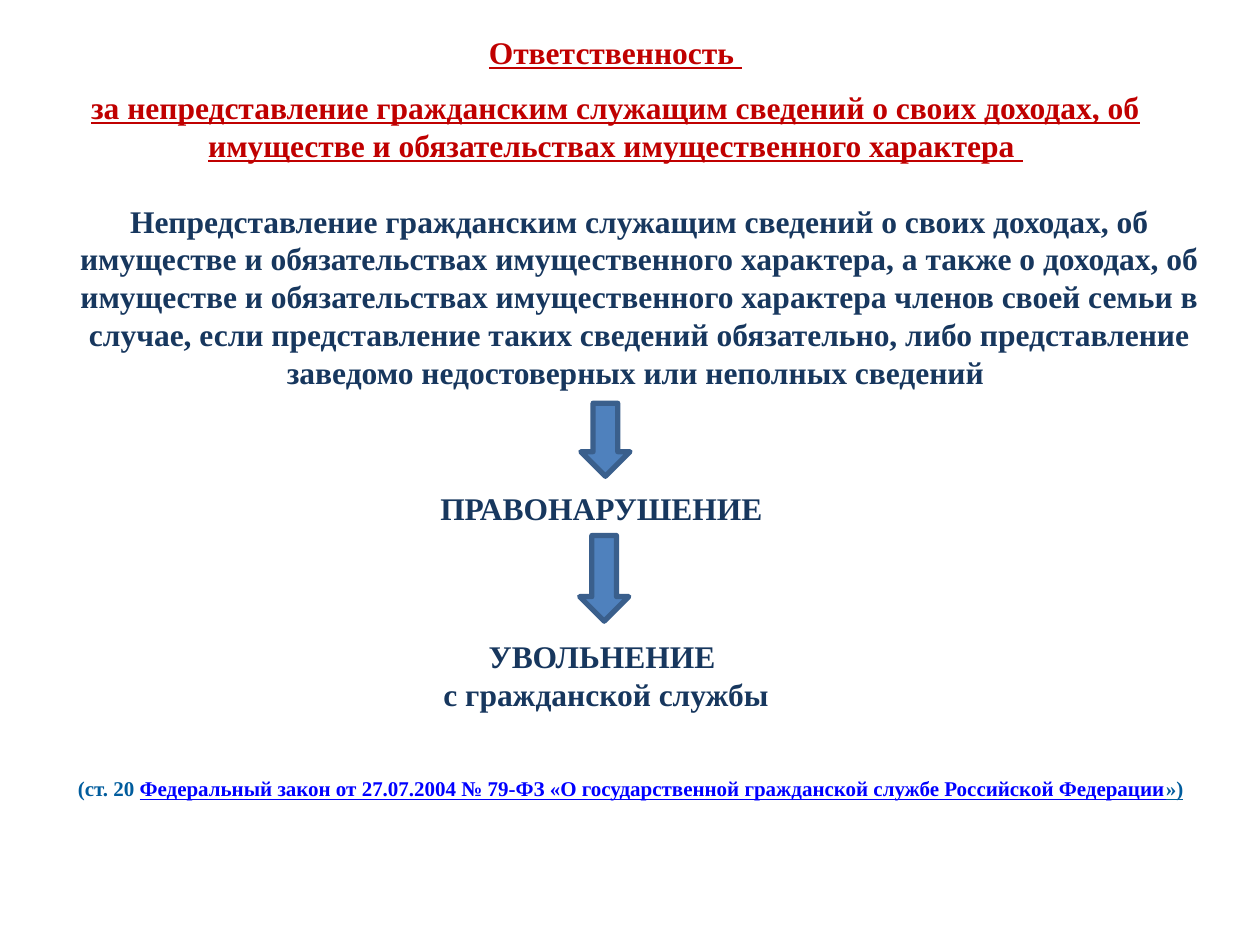
"""Build a slide on liability for not filing income declarations."""
from dataclasses import dataclass

from pptx import Presentation
from pptx.dml.color import RGBColor
from pptx.enum.shapes import MSO_SHAPE
from pptx.enum.text import MSO_ANCHOR, MSO_AUTO_SIZE, PP_ALIGN
from pptx.util import Inches, Pt

FONT = "Times New Roman"
RED = RGBColor(0xC0, 0x00, 0x00)
NAVY = RGBColor(0x17, 0x37, 0x5E)
TEAL = RGBColor(0x00, 0x5C, 0x9D)
LINK_BLUE = RGBColor(0x00, 0x00, 0xFF)
ARROW_FILL = RGBColor(0x4F, 0x81, 0xBD)
ARROW_LINE = RGBColor(0x3A, 0x5F, 0x8C)


@dataclass
class Area:
    left: float
    top: float
    width: float
    height: float

    def lengths(self) -> tuple:
        return tuple(map(Inches, (self.left, self.top, self.width, self.height)))


@dataclass
class Span:
    text: str
    color: RGBColor = NAVY
    size: int = 18
    underline: bool = False


@dataclass
class Block:
    area: Area
    paragraphs: list[list[Span]]


TITLE_AREA = Area(0.28, 0.21, 9.21, 1.15)
TITLE = [
    [Span("Ответственность ", RED, underline=True)],
    [Span("за непредставление гражданским служащим сведений о своих доходах, "
          "об имуществе и обязательствах имущественного характера ",
          RED, underline=True)],
]
BLOCKS = [
    Block(Area(0.43, 1.55, 9.29, 1.62), [[Span(
        "Непредставление гражданским служащим сведений о своих доходах, "
        "об имуществе и обязательствах имущественного характера, а также "
        "о доходах, об имуществе и обязательствах имущественного характера "
        "членов своей семьи в случае, если представление таких сведений "
        "обязательно, либо представление заведомо недостоверных или "
        "неполных сведений ")]]),
    Block(Area(3.19, 3.83, 3.23, 0.42), [[Span("ПРАВОНАРУШЕНИЕ ")]]),
    Block(Area(2.24, 5.01, 5.14, 0.71),
          [[Span("УВОЛЬНЕНИЕ ")], [Span("с гражданской службы")]]),
    Block(Area(0.28, 6.11, 9.45, 0.3), [[
        Span("(ст. 20 ", TEAL, 12),
        Span("Федеральный закон от 27.07.2004 № 79-ФЗ «О государственной "
             "гражданской службе Российской Федерации", LINK_BLUE, 12, True),
        Span("»)", TEAL, 12, True),
    ]]),
]
ARROWS = [Area(4.61, 3.2, 0.39, 0.58), Area(4.6, 4.25, 0.39, 0.68)]


def write_text(box, paragraphs: list[list[Span]], space_before: int = 0) -> None:
    frame = box.text_frame
    frame.word_wrap = True
    frame.auto_size = MSO_AUTO_SIZE.NONE
    frame.vertical_anchor = MSO_ANCHOR.TOP
    frame.text = "\n".join("" for _ in paragraphs)
    for para, spans in zip(frame.paragraphs, paragraphs):
        para.alignment = PP_ALIGN.CENTER
        para.space_before = Pt(space_before)
        for span in spans:
            run = para.add_run()
            run.text = span.text
            run.font.name = FONT
            run.font.size = Pt(span.size)
            run.font.bold = True
            run.font.underline = span.underline
            run.font.color.rgb = span.color


def add_block(slide, block: Block) -> None:
    write_text(slide.shapes.add_textbox(*block.area.lengths()), block.paragraphs)


def add_arrow(slide, area: Area) -> None:
    arrow = slide.shapes.add_shape(MSO_SHAPE.DOWN_ARROW, *area.lengths())
    arrow.shadow.inherit = False
    arrow.fill.solid()
    arrow.fill.fore_color.rgb = ARROW_FILL
    arrow.line.color.rgb = ARROW_LINE
    arrow.line.width = Pt(3)


def main() -> None:
    deck = Presentation()
    deck.slide_width, deck.slide_height = Inches(10), Inches(7.5)
    slide = deck.slides.add_slide(deck.slide_layouts.get_by_name("Title Only"))
    title = slide.shapes.title
    title.left, title.top, title.width, title.height = TITLE_AREA.lengths()
    write_text(title, TITLE, space_before=10)
    for block in BLOCKS:
        add_block(slide, block)
    for area in ARROWS:
        add_arrow(slide, area)
    deck.save("out.pptx")


if __name__ == "__main__":
    main()
